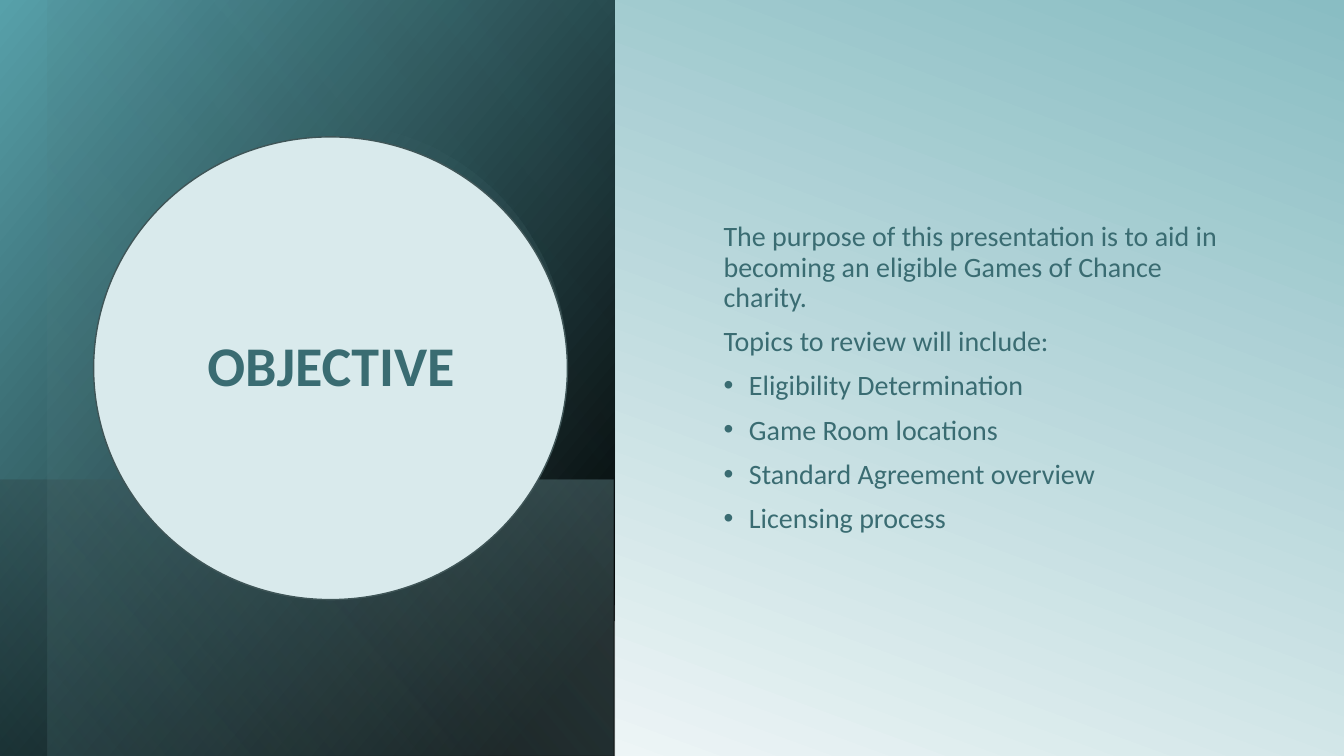
"""Builds the objective slide: a dark gradient panel with a round title and a topic list."""
import pptx
import pptx.dml.color
import pptx.enum.shapes
import pptx.enum.text
import pptx.oxml
import pptx.oxml.ns
import pptx.util

Cm = pptx.util.Cm
Pt = pptx.util.Pt
RGBColor = pptx.dml.color.RGBColor
MSO_SHAPE = pptx.enum.shapes.MSO_SHAPE
PP_ALIGN = pptx.enum.text.PP_ALIGN
qn = pptx.oxml.ns.qn

BLACK = RGBColor(0x00, 0x00, 0x00)
WHITE = RGBColor(0xFF, 0xFF, 0xFF)
TEAL = RGBColor(0x57, 0xA1, 0xAA)
SOFT_TEAL = RGBColor(0x90, 0xC1, 0xC7)
SKY = RGBColor(0x89, 0xBD, 0xC3)
MIST = RGBColor(0xBC, 0xDA, 0xDD)
DISC = RGBColor(0xD9, 0xEA, 0xEC)
RIM = RGBColor(0x3F, 0x55, 0x57)
INK = RGBColor(0x3A, 0x6C, 0x72)

INTRO = [
    "The purpose of this presentation is to aid in becoming an eligible Games of Chance charity.",
    "Topics to review will include:",
]
TOPICS = [
    "Eligibility Determination",
    "Game Room locations",
    "Standard Agreement overview",
    "Licensing process",
]


class SlideBuilder:
    font = "Calibri"

    def __init__(self, prs):
        self.s = prs.slides.add_slide(prs.slide_layouts[1])

    def gradient(self, fill, owner, stops, angle):
        fill.gradient()
        fill.gradient_angle = 360 - angle
        gs_list = owner.find(".//" + qn("a:gsLst"))
        for gs in list(gs_list):
            gs_list.remove(gs)
        for position, color, opacity in stops:
            gs_list.append(pptx.oxml.parse_xml(
                f'<a:gs {pptx.oxml.ns.nsdecls("a")} pos="{position * 1000}">'
                f'<a:srgbClr val="{color}"><a:alpha val="{opacity * 1000}"/></a:srgbClr></a:gs>'))

    def background(self, stops, angle):
        self.gradient(self.s.background.fill, self.s.element, stops, angle)

    def shape(self, kind, box):
        sp = self.s.shapes.add_shape(kind, *map(Cm, box))
        sp.shadow.inherit = False
        return sp

    def glow(self, kind, box, rotation, stops, angle, flip=False):
        sp = self.shape(kind, box)
        sp.rotation = rotation
        if flip:
            sp.element.spPr.xfrm.set("flipH", "1")
        self.gradient(sp.fill, sp.element, stops, angle)
        sp.line.fill.background()

    def disc(self, box):
        sp = self.shape(MSO_SHAPE.OVAL, box)
        sp.fill.solid()
        sp.fill.fore_color.rgb = DISC
        sp.line.color.rgb = RIM
        sp.line.width = Pt(1)

    def placeholder(self, sp, box):
        self.s.shapes.element.append(sp.element)
        sp.left, sp.top, sp.width, sp.height = map(Cm, box)
        tf = sp.text_frame
        tf.word_wrap = True
        tf.auto_size = pptx.enum.text.MSO_AUTO_SIZE.NONE
        tf.vertical_anchor = pptx.enum.text.MSO_ANCHOR.MIDDLE
        return tf

    def paragraph(self, p, text, size, bold, align, before):
        p.text = text
        p.alignment = align
        p.line_spacing = 0.9
        p.space_before = Pt(before)
        for r in p.runs:
            r.font.name = self.font
            r.font.size = Pt(size)
            r.font.bold = bold
            r.font.color.rgb = INK

    def title(self, text, box):
        tf = self.placeholder(self.s.shapes.title, box)
        self.paragraph(tf.paragraphs[0], text, 40, True, PP_ALIGN.CENTER, 0)

    def body(self, intro, topics, box):
        tf = self.placeholder(self.s.placeholders[1], box)
        for i, text in enumerate(intro + topics):
            p = tf.add_paragraph() if i else tf.paragraphs[0]
            self.paragraph(p, text, 20, False, PP_ALIGN.LEFT, 10)
            self.bullet(p, "•" if i >= len(intro) else None)

    def bullet(self, p, char):
        pPr = p._p.get_or_add_pPr()
        indent = Cm(0.64) if char else 0
        pPr.set("marL", str(indent))
        pPr.set("indent", str(-indent))
        if char:
            pPr.append(pptx.oxml.parse_xml(
                f'<a:buFont {pptx.oxml.ns.nsdecls("a")} typeface="Arial"/>'))
            pPr.append(pptx.oxml.parse_xml(
                f'<a:buChar {pptx.oxml.ns.nsdecls("a")} char="{char}"/>'))
        else:
            pPr.append(pptx.oxml.parse_xml(f'<a:buNone {pptx.oxml.ns.nsdecls("a")}/>'))


def main():
    prs = pptx.Presentation()
    prs.slide_width, prs.slide_height = Cm(33.87), Cm(19.05)
    slide = SlideBuilder(prs)
    slide.background([(0, SKY, 100), (97, WHITE, 100), (100, SKY, 100)], 110)

    panels = [
        ((-1.78, 1.78, 19.05, 15.49), [(8, BLACK, 100), (100, TEAL, 100)], 50),
        ((4.24, 7.82, 6.96, 15.49), [(2, SOFT_TEAL, 29), (100, BLACK, 30)], 130),
        ((-1.17, 2.36, 19.05, 14.3), [(0, BLACK, 0), (99, SOFT_TEAL, 11)], 130),
    ]
    for box, stops, angle in panels:
        slide.glow(MSO_SHAPE.RECTANGLE, box, 90, stops, angle, flip=True)
    slide.glow(MSO_SHAPE.OVAL, (2.29, 3.12, 11.99, 11.99), 101.6,
               [(39, SOFT_TEAL, 0), (100, MIST, 15)], 290)
    slide.disc((2.36, 3.45, 11.94, 11.66))

    slide.title("OBJECTIVE", (2.46, 4.57, 11.76, 9.4))
    slide.body(INTRO, TOPICS, (17.98, 1.83, 13.51, 15.42))
    prs.save("out.pptx")


if __name__ == "__main__":
    main()
